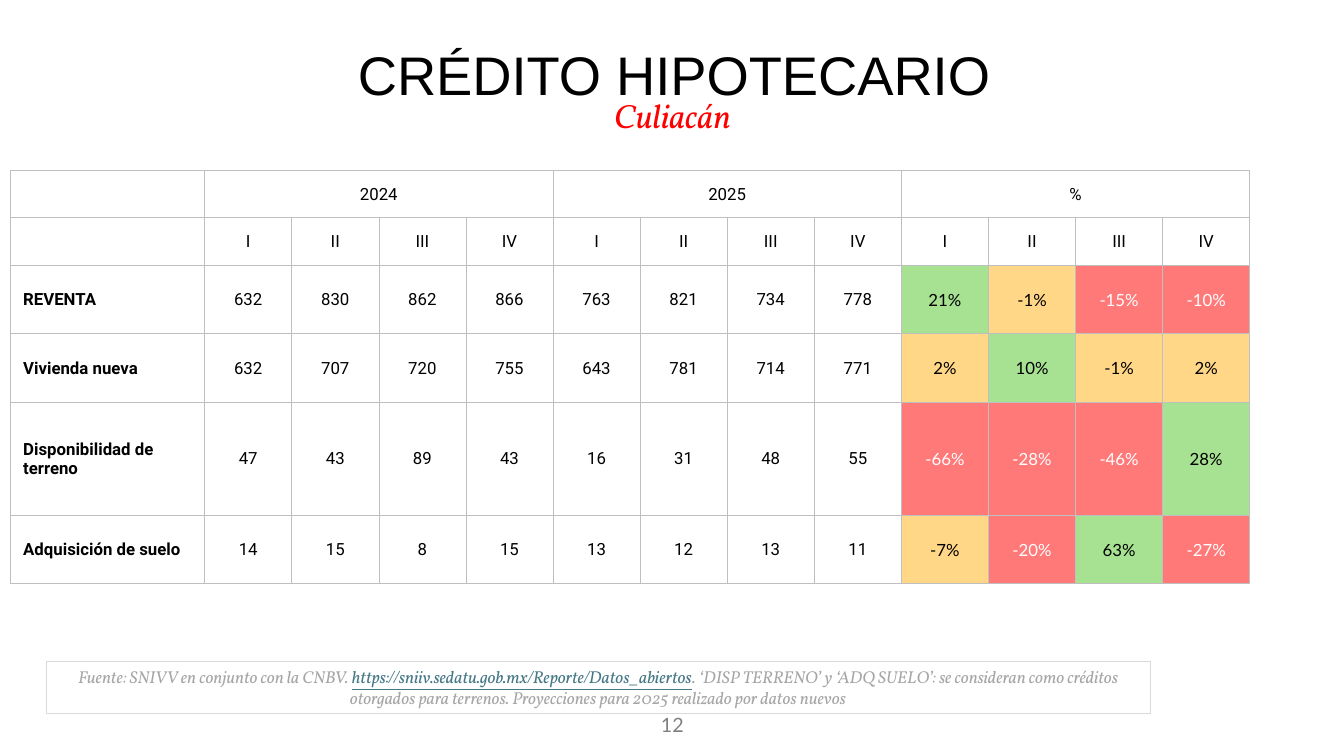
from dataclasses import dataclass
from math import floor
from typing import NamedTuple, Optional

from lxml import etree
from pptx import Presentation
from pptx.dml.color import RGBColor
from pptx.enum import shapes, text
from pptx.oxml import ns
from pptx.util import Inches, Pt


@dataclass(frozen=True)
class Theme:
    black: str = "000000"
    white: str = "FFFFFF"
    red: str = "FF0000"
    grey: str = "A6A6A6"
    page_grey: str = "808080"
    link: str = "467886"
    frame: str = "D9D9D9"
    grid: str = "BFBFBF"
    rise: str = "A7E292"
    steady: str = "FFD786"
    fall: str = "FF7979"
    title_size: float = 38.8
    subtitle_size: float = 24
    page_size: float = 14.1
    source_size: float = 12.3
    table_size: float = 12


class Style(NamedTuple):
    font: str
    size: float
    color: str
    bold: bool = False
    italic: bool = False


class Box(NamedTuple):
    left: float
    top: float
    width: float
    height: float

    def lengths(self) -> list:
        return [Inches(v) for v in self]


class CreditRow(NamedTuple):
    label: str
    height: float
    y2024: list
    y2025: list


THEME = Theme()
QUARTERS = ["I", "II", "III", "IV"]
GROUPS = ["2024", "2025", "%"]
CREDITS = [
    CreditRow("REVENTA", 0.68, [632, 830, 862, 866], [763, 821, 734, 778]),
    CreditRow("Vivienda nueva", 0.68, [632, 707, 720, 755], [643, 781, 714, 771]),
    CreditRow("Disponibilidad de terreno", 1.12, [47, 43, 89, 43], [16, 31, 48, 55]),
    CreditRow("Adquisición de suelo", 0.68, [14, 15, 8, 15], [13, 12, 13, 11]),
]
HEADER_HEIGHT = 0.47
LABEL_WIDTH = 1.93
TABLE_BOX = Box(0.1, 1.69, 12.3, 4.1)
SOURCE = [
    ("Fuente: SNIVV en conjunto con la CNBV. ", False),
    ("https://sniiv.sedatu.gob.mx/Reporte/Datos_abiertos", True),
    (". ‘DISP TERRENO’ y ‘ADQ SUELO’: se consideran como créditos otorgados para "
     "terrenos. Proyecciones para 2025 realizado por datos nuevos", False),
]

CENTER, LEFT = text.PP_ALIGN.CENTER, text.PP_ALIGN.LEFT
TOP, MIDDLE = text.MSO_ANCHOR.TOP, text.MSO_ANCHOR.MIDDLE
TABLE_TEXT = Style("Roboto", THEME.table_size, THEME.black)
LABEL_TEXT = TABLE_TEXT._replace(bold=True)


def apply_style(font, style: Style) -> None:
    font.name, font.size = style.font, Pt(style.size)
    font.bold, font.italic = style.bold, style.italic
    font.color.rgb = RGBColor.from_string(style.color)


def set_frame(tf, anchor, margins: tuple) -> None:
    tf.word_wrap = True
    tf.auto_size = text.MSO_AUTO_SIZE.NONE
    tf.vertical_anchor = anchor
    (tf.margin_left, tf.margin_top,
     tf.margin_right, tf.margin_bottom) = [Inches(m) for m in margins]


def write(tf, words: str, style: Style, align=CENTER):
    p = tf.paragraphs[0]
    p.text = words
    p.alignment = align
    apply_style(p.font, style)
    return p


def add_title(slide) -> None:
    sp = slide.shapes.title
    sp.left, sp.top, sp.width, sp.height = Box(0.97, 0.53, 11.43, 0.57).lengths()
    set_frame(sp.text_frame, TOP, (0.11, 0.06, 0.11, 0.06))
    p = write(sp.text_frame, "CRÉDITO HIPOTECARIO",
              Style("Arial", THEME.title_size, THEME.black))
    p.line_spacing = 0.7
    p.space_before = Pt(0)


def add_label(slide, box: Box, words: str, style: Style, anchor, margins: tuple) -> None:
    tf = slide.shapes.add_textbox(*box.lengths()).text_frame
    set_frame(tf, anchor, margins)
    write(tf, words, style)


def add_source(slide) -> None:
    sp = slide.shapes.add_shape(shapes.MSO_SHAPE.RECTANGLE,
                                *Box(0.46, 6.56, 10.95, 0.52).lengths())
    sp.shadow.inherit = False
    sp.fill.background()
    sp.line.color.rgb = RGBColor.from_string(THEME.frame)
    sp.line.width = Pt(0.75)
    set_frame(sp.text_frame, TOP, (0.1, 0.05, 0.1, 0.05))
    p = sp.text_frame.paragraphs[0]
    p.alignment = CENTER
    for words, is_link in SOURCE:
        r = p.add_run()
        r.text = words
        apply_style(r.font, Style("Vollkorn", THEME.source_size,
                                  THEME.link if is_link else THEME.grey, italic=True))
        r.font.underline = is_link


def set_borders(cell) -> None:
    tc_pr = cell._tc.get_or_add_tcPr()
    for side in ("lnL", "lnR", "lnT", "lnB"):
        ln = etree.SubElement(tc_pr, ns.qn(f"a:{side}"), w=str(Pt(0.5)))
        fill = etree.SubElement(ln, ns.qn("a:solidFill"))
        etree.SubElement(fill, ns.qn("a:srgbClr"), val=THEME.grid)


def fill_cell(cell, words: str, style: Style = TABLE_TEXT, align=CENTER,
              fill: Optional[str] = None) -> None:
    cell.vertical_anchor = MIDDLE
    cell.margin_left = Inches(0.13 if align == LEFT else 0.01)
    cell.margin_top = cell.margin_right = Inches(0.01)
    cell.margin_bottom = 0
    if fill:
        cell.fill.solid()
        cell.fill.fore_color.rgb = RGBColor.from_string(fill)
    if words:
        write(cell.text_frame, words, style, align)


def fill_change(cell, before: int, after: int) -> None:
    """Show the yearly change, coloured by a threshold of ten per cent."""
    change = floor(100 * (after / before - 1) + 0.5)
    fill = (THEME.rise if change >= 10 else
            THEME.fall if change <= -10 else THEME.steady)
    color = THEME.white if fill == THEME.fall else THEME.black
    fill_cell(cell, f"{change}%", Style("Lato", THEME.table_size, color), fill=fill)


def add_credit_table(slide) -> None:
    span = len(QUARTERS)
    columns = 1 + span * len(GROUPS)
    table = slide.shapes.add_table(2 + len(CREDITS), columns, *TABLE_BOX.lengths()).table
    table.first_row = table.horz_banding = False
    heights = [HEADER_HEIGHT] * 2 + [row.height for row in CREDITS]
    for table_row, height in zip(table.rows, heights):
        table_row.height = Inches(height)
    widths = [LABEL_WIDTH] + [(TABLE_BOX.width - LABEL_WIDTH) / (columns - 1)] * (columns - 1)
    for column, width in zip(table.columns, widths):
        column.width = Inches(width)
    for cell in table.iter_cells():
        set_borders(cell)
        cell.fill.background()

    for i, group in enumerate(GROUPS):
        first = 1 + i * span
        table.cell(0, first).merge(table.cell(0, first + span - 1))
        fill_cell(table.cell(0, first), group)
    for i, quarter in enumerate(QUARTERS * len(GROUPS), start=1):
        fill_cell(table.cell(1, i), quarter)
    for i, row in enumerate(CREDITS, start=2):
        fill_cell(table.cell(i, 0), row.label, LABEL_TEXT, LEFT)
        for j, value in enumerate(row.y2024 + row.y2025, start=1):
            fill_cell(table.cell(i, j), str(value))
        for j, (before, after) in enumerate(zip(row.y2024, row.y2025), start=1 + 2 * span):
            fill_change(table.cell(i, j), before, after)


def main() -> None:
    prs = Presentation()
    prs.slide_width, prs.slide_height = Inches(13.33), Inches(7.5)
    slide = prs.slides.add_slide(prs.slide_layouts[5])
    add_label(slide, Box(6.13, 7.08, 1.07, 0.24), "12",
              Style("Lato", THEME.page_size, THEME.page_grey), MIDDLE,
              (0.1, 0.02, 0.09, 0.05))
    add_title(slide)
    add_label(slide, Box(-0.33, 0.89, 14, 0.5), "Culiacán",
              Style("Vollkorn", THEME.subtitle_size, THEME.red, italic=True), TOP,
              (0.1, 0.05, 0.1, 0.05))
    add_source(slide)
    add_credit_table(slide)
    prs.save("out.pptx")


if __name__ == "__main__":
    main()
